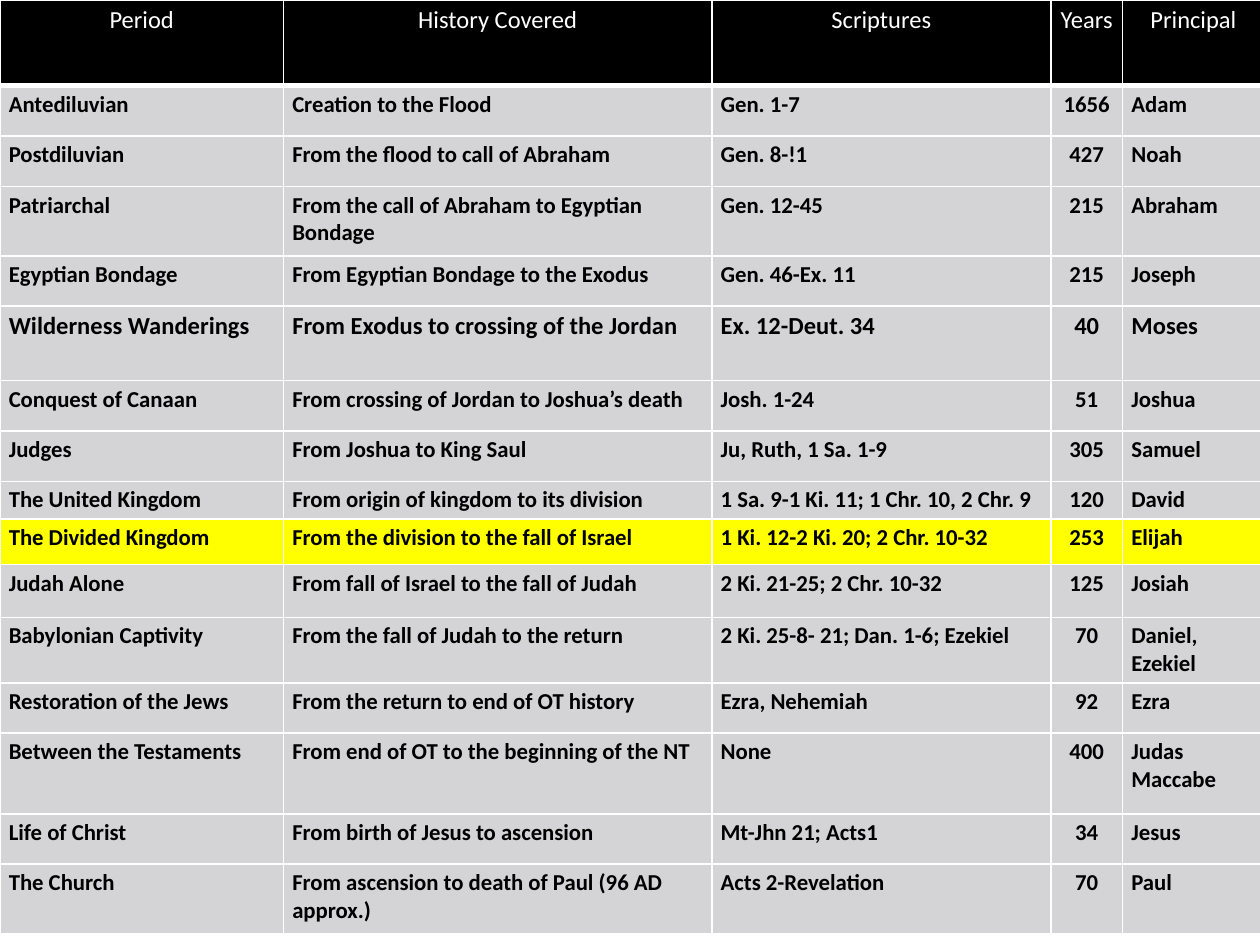
"""Build a slide with a table of the periods of Bible history."""
from lxml import etree
from pptx import Presentation
from pptx.dml.color import RGBColor
from pptx.enum.text import PP_ALIGN
from pptx.oxml.ns import qn
from pptx.util import Inches, Pt

CENTER, LEFT = PP_ALIGN.CENTER, PP_ALIGN.LEFT
BLACK = RGBColor(0x00, 0x00, 0x00)
WHITE = RGBColor(0xFF, 0xFF, 0xFF)
GREY = RGBColor(0xD4, 0xD4, 0xD6)
YELLOW = RGBColor(0xFF, 0xFF, 0x00)

HEADER = {"size": 14, "bold": False, "color": WHITE, "fill": BLACK, "bottom": 3}
BODY = {"size": 13, "bold": True, "color": BLACK, "fill": GREY, "bottom": 1}
LARGE = {**BODY, "size": 14}
CURRENT = {**BODY, "fill": YELLOW}
MARGINS = {"margin_left": Inches(0.07), "margin_right": Inches(0.07),
           "margin_top": Inches(0.04), "margin_bottom": Inches(0.04)}

COLUMN_WIDTHS = [2.25, 3.4, 2.69, 0.57, 1.17]
YEARS_COLUMN = 3
PERIODS = [
    (0.68, HEADER, ["Period", "History Covered", "Scriptures", "Years", "Principal "]),
    (0.4, BODY, ["Antediluvian", "Creation to the Flood", "Gen. 1-7", "1656", "Adam"]),
    (0.4, BODY, ["Postdiluvian", "From the flood to call of Abraham",
                 "Gen. 8-!1", "427", "Noah"]),
    (0.55, BODY, ["Patriarchal", "From the call of Abraham to Egyptian Bondage",
                  "Gen. 12-45", "215", "Abraham"]),
    (0.4, BODY, ["Egyptian Bondage", "From Egyptian Bondage to the Exodus",
                 "Gen. 46-Ex. 11", "215", "Joseph"]),
    (0.59, LARGE, ["Wilderness Wanderings", "From Exodus to crossing of the Jordan",
                   "Ex. 12-Deut. 34", "40", "Moses"]),
    (0.4, BODY, ["Conquest of Canaan", "From crossing of Jordan to Joshua’s death",
                 "Josh. 1-24", "51", "Joshua"]),
    (0.4, BODY, ["Judges", "From Joshua to King Saul",
                 "Ju, Ruth, 1 Sa. 1-9", "305", "Samuel"]),
    (0.3, BODY, ["The United Kingdom", "From origin of kingdom to its division",
                 "1 Sa. 9-1 Ki. 11; 1 Chr. 10, 2 Chr. 9", "120", "David"]),
    (0.36, CURRENT, ["The Divided Kingdom", "From the division to the fall of Israel",
                     "1 Ki. 12-2 Ki. 20; 2 Chr. 10-32", "253", "Elijah"]),
    (0.42, BODY, ["Judah Alone", "From fall of Israel to the fall of Judah",
                  "2 Ki. 21-25; 2 Chr. 10-32", "125", "Josiah"]),
    (0.52, BODY, ["Babylonian Captivity", "From the fall of Judah to the return",
                  "2 Ki. 25-8- 21; Dan. 1-6; Ezekiel", "70", "Daniel, Ezekiel"]),
    (0.4, BODY, ["Restoration of the Jews", "From the return to end of OT history",
                 "Ezra, Nehemiah", "92", "Ezra"]),
    (0.64, BODY, ["Between the Testaments", "From end of OT to the beginning of the NT",
                  "None", "400", "Judas Maccabe"]),
    (0.4, BODY, ["Life of Christ", "From birth of Jesus to ascension",
                 "Mt-Jhn 21; Acts1", "34", "Jesus"]),
    (0.55, BODY, ["The Church", "From ascension to death of Paul (96 AD approx.)",
                  "Acts 2-Revelation", "70", "Paul"]),
]


class SlideBuilder:
    """Hold the style and the current slide."""

    font = "Calibri"
    border_color = WHITE

    def __init__(self, prs):
        """Add a blank slide."""
        self.slide = prs.slides.add_slide(prs.slide_layouts[6])

    def border(self, cell, side, width):
        """Draw one side of a cell border."""
        ln = etree.SubElement(cell._tc.get_or_add_tcPr(), qn(f"a:ln{side}"),
                              w=str(Pt(width)))
        fill = etree.SubElement(ln, qn("a:solidFill"))
        etree.SubElement(fill, qn("a:srgbClr"), val=str(self.border_color))

    def cell(self, cell, text, style, align):
        """Fill and format one table cell."""
        for name, value in MARGINS.items():
            setattr(cell, name, value)
        for side, width in {"L": 1, "R": 1, "T": 1, "B": style["bottom"]}.items():
            self.border(cell, side, width)
        cell.fill.solid()
        cell.fill.fore_color.rgb = style["fill"]
        p = cell.text_frame.paragraphs[0]
        p.alignment = align
        r = p.add_run()
        r.text = text
        for name, value in {"name": self.font, "size": Pt(style["size"]),
                            "bold": style["bold"]}.items():
            setattr(r.font, name, value)
        r.font.color.rgb = style["color"]

    def table(self, left, top, widths, rows):
        """Add a table from rows of height, style and texts."""
        height = sum(row[0] for row in rows)
        table = self.slide.shapes.add_table(
            len(rows), len(widths), Inches(left), Inches(top),
            Inches(sum(widths)), Inches(height)).table
        for column, width in zip(table.columns, widths):
            column.width = Inches(width)
        for i, (row_height, style, texts) in enumerate(rows):
            table.rows[i].height = Inches(row_height)
            for j, text in enumerate(texts):
                centered = style is HEADER or j == YEARS_COLUMN
                self.cell(table.cell(i, j), text, style, CENTER if centered else LEFT)


def main():
    """Build and save the presentation."""
    prs = Presentation()
    prs.slide_width, prs.slide_height = Inches(10), Inches(7.5)
    SlideBuilder(prs).table(0, 0, COLUMN_WIDTHS, PERIODS)
    prs.save("out.pptx")


if __name__ == "__main__":
    main()
